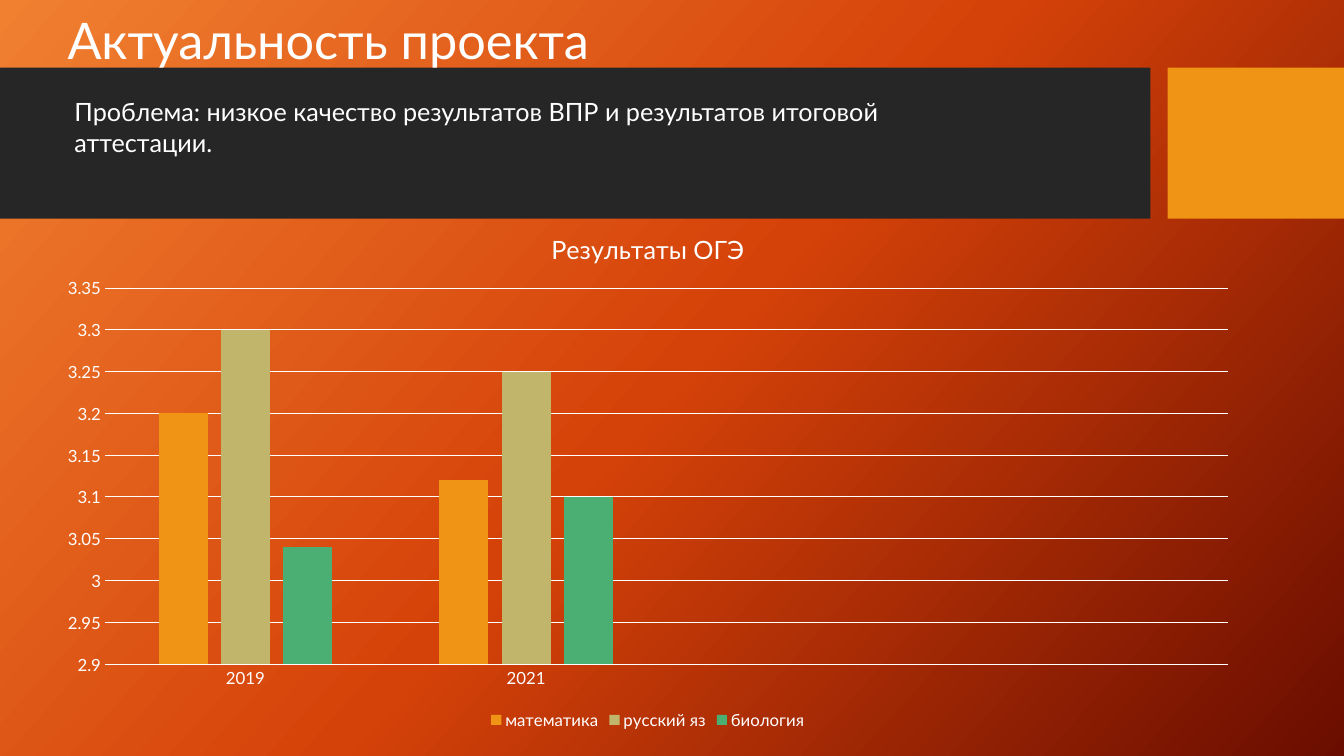
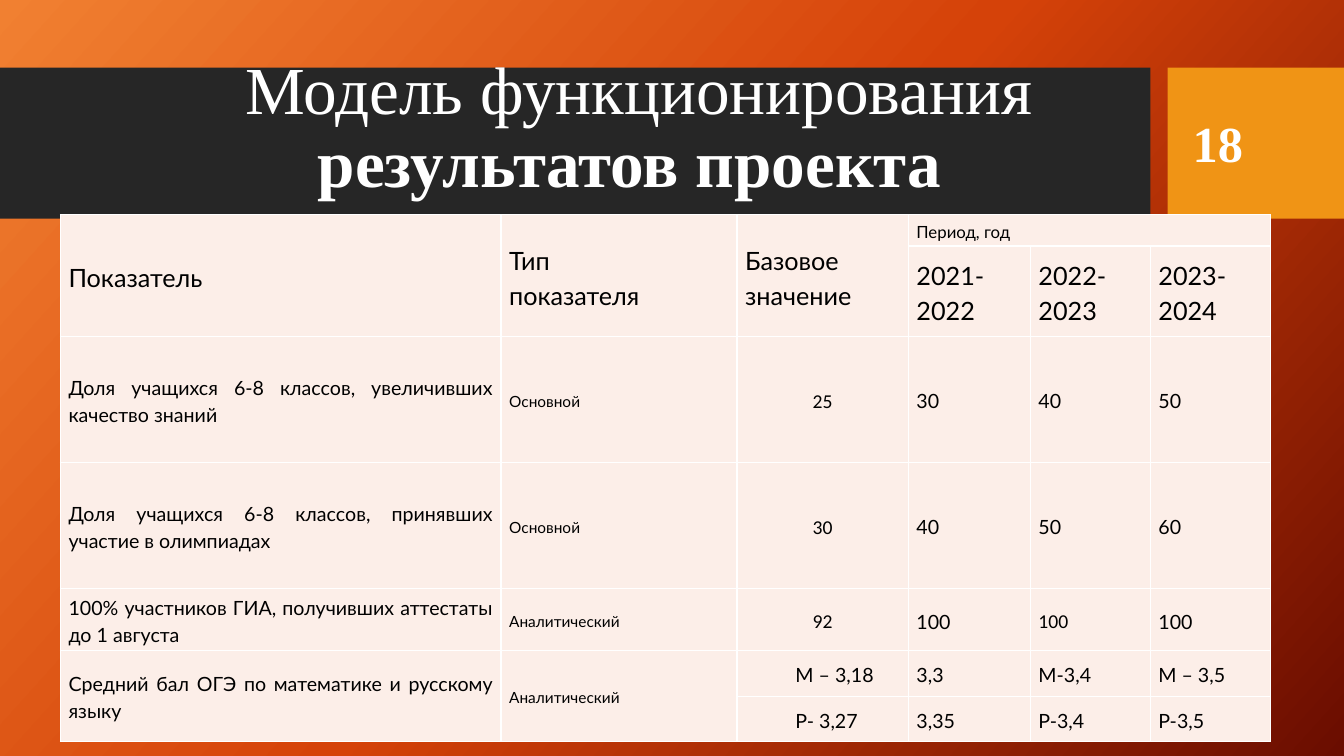
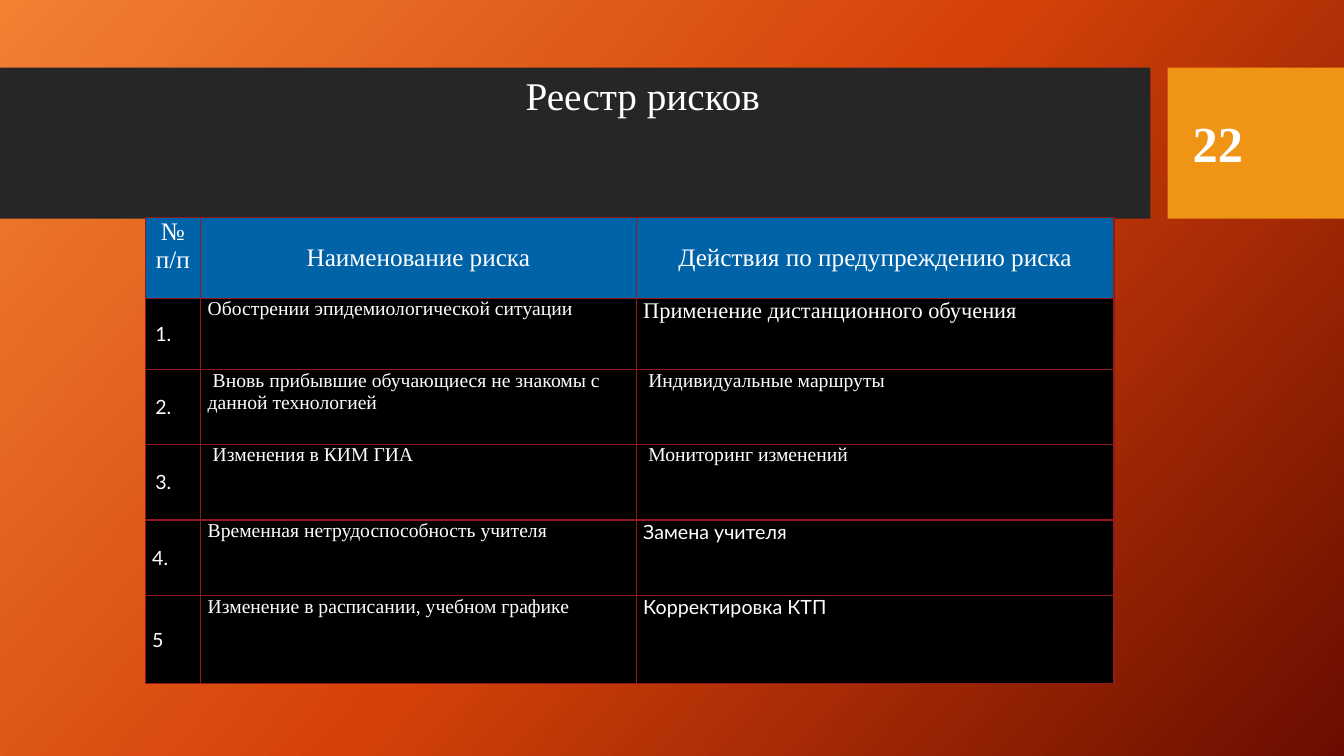
"""Builds three project slides: exam results chart, indicator table and risk register."""
from copy import deepcopy
from dataclasses import dataclass

from lxml import etree
from pptx import Presentation
from pptx.chart.data import CategoryChartData
from pptx.dml.color import RGBColor
from pptx.enum import chart as charts, shapes, text
from pptx.oxml import ns
from pptx.util import Inches, Pt


@dataclass(frozen=True)
class Theme:
    sans: str = "Lato"
    serif: str = "Times New Roman"
    plain: str = "Calibri"
    white: str = "FFFFFF"
    black: str = "000000"
    band: str = "262626"
    accent: str = "F09415"
    header: str = "0062A7"
    cell: str = "FCEEE8"
    risk_border: str = "921A1D"
    gradient: tuple = ((0, "F18031"), (0.5, "D54209"), (1, "6A0D00"))
    series: tuple = ("F09415", "C1B56B", "4BAF73")
    title: int = 36
    title_large: int = 48
    title_small: int = 28
    heading: int = 18
    action: int = 16
    body: int = 14
    label: int = 12
    small: int = 11


THEME = Theme()
LEFT, CENTER, JUSTIFY = text.PP_ALIGN.LEFT, text.PP_ALIGN.CENTER, text.PP_ALIGN.JUSTIFY
TOP, MIDDLE, BOTTOM = text.MSO_ANCHOR.TOP, text.MSO_ANCHOR.MIDDLE, text.MSO_ANCHOR.BOTTOM

BANDS = [((0, 0.67, 11.41, 1.5), THEME.band), ((11.58, 0.67, 1.75, 1.5), THEME.accent)]
NUMBER_BOX = (11.73, 0.82, 1.26, 1.19)

PROBLEM = "Проблема: низкое качество результатов ВПР и результатов итоговой аттестации."
YEARS = ["2019", "2021", "", ""]
RESULTS = {
    "математика": (3.2, 3.12, None, None),
    "русский яз": (3.3, 3.25, None, None),
    "биология": (3.04, 3.1, None, None),
}
PLOT_LAYOUT = {"x": 0.051, "y": 0.148, "w": 0.929, "h": 0.719}

HEAD = dict(size=THEME.heading)
KIND = dict(size=THEME.small)
BASE = dict(font=THEME.plain, align=CENTER)
SCORE = dict(margin=0.5)
INDICATORS = [
    [("Показатель", HEAD), ("Тип\nпоказателя", HEAD), ("Базовое\nзначение", HEAD),
     ("Период, год", dict(size=THEME.label)), None, None],
    [None, None, None, ("2021-2022", HEAD), ("2022-2023", HEAD), ("2023-2024", HEAD)],
    [("Доля учащихся 6-8 классов, увеличивших качество знаний", {}), ("Основной", KIND),
     ("25", BASE), ("30", {}), ("40", {}), ("50", {})],
    [("Доля учащихся 6-8 классов, принявших участие в олимпиадах", {}), ("Основной", KIND),
     ("30", BASE), ("40", {}), ("50", {}), ("60", {})],
    [("100% участников ГИА, получивших аттестаты до 1 августа", {}), ("Аналитический", KIND),
     ("92", BASE), ("100", {}), ("100", dict(font=THEME.plain)), ("100", {})],
    [("Средний бал ОГЭ по математике и русскому языку", {}), ("Аналитический", KIND),
     ("М – 3,18", SCORE), ("3,3", {}), ("М-3,4", {}), ("М – 3,5", {})],
    [None, None, ("Р- 3,27", SCORE), ("3,35", {}), ("Р-3,4", {}), ("Р-3,5", {})],
]
INDICATOR_SPANS = [(0, 0, 1, 0), (0, 1, 1, 1), (0, 2, 1, 2), (0, 3, 0, 5), (5, 0, 6, 0), (5, 1, 6, 1)]

RISK_HEAD = dict(size=THEME.heading, align=CENTER, anchor=MIDDLE, fill=THEME.header)
WIDE = dict(font=THEME.sans, anchor=MIDDLE, insets=(0.1, 0.05))
NARROW = dict(font=THEME.sans, anchor=MIDDLE)
SHIFTED = dict(first=0.05)
SANS = dict(font=THEME.sans)
RISKS = [
    [("№\nп/п", dict(RISK_HEAD, anchor=TOP)), ("Наименование риска", RISK_HEAD),
     ("Действия по предупреждению риска", RISK_HEAD)],
    [("1.", WIDE), ("Обострении эпидемиологической ситуации", {}),
     ("Применение дистанционного обучения", dict(size=THEME.action))],
    [("2.", WIDE), ("Вновь прибывшие обучающиеся не знакомы с данной технологией", SHIFTED),
     ("Индивидуальные маршруты", SHIFTED)],
    [("3.", WIDE), ("Изменения в КИМ ГИА", SHIFTED), ("Мониторинг изменений", SHIFTED)],
    [("4.", NARROW), ("Временная нетрудоспособность учителя", {}), ("Замена учителя", SANS)],
    [("5", NARROW), ("Изменение в расписании, учебном графике", {}), ("Корректировка КТП", SANS)],
]


def rgb(value):
    return RGBColor.from_string(value)


def place(box, area):
    box.left, box.top, box.width, box.height = map(Inches, area)


def style_font(font, size, name=THEME.sans, color=THEME.white, bold=False):
    font.size, font.name, font.bold = Pt(size), name, bold
    font.color.rgb = rgb(color)


def write(para, words, size, font=THEME.sans, color=THEME.white, bold=False,
          align=LEFT, spacing=1.0, margin=0, first=0):
    para.alignment, para.line_spacing = align, spacing
    properties = para._p.get_or_add_pPr()
    properties.set("marL", str(Inches(margin)))
    properties.set("indent", str(Inches(first)))
    span = para.add_run()
    span.text = words
    style_font(span.font, size, font, color, bold)


def write_lines(frame, lines, anchor=TOP, **style):
    frame.word_wrap, frame.vertical_anchor = True, anchor
    for index, (words, changes) in enumerate(lines):
        para = frame.add_paragraph() if index else frame.paragraphs[0]
        write(para, words, **{**style, **changes})


def set_title(page, area, lines, **style):
    title = page.shapes.title
    place(title, area)
    title.text_frame.auto_size = text.MSO_AUTO_SIZE.NONE
    write_lines(title.text_frame, lines, spacing=0.9, **style)


def add_text(page, area, words, **style):
    box = page.shapes.add_textbox(*map(Inches, area))
    write_lines(box.text_frame, [(words, {})], **style)


def add_number(page, number):
    add_text(page, NUMBER_BOX, number, size=THEME.title, font=THEME.serif, bold=True, anchor=MIDDLE)


def set_borders(cell, color):
    properties = cell._tc.get_or_add_tcPr()
    for side in ("lnL", "lnR", "lnT", "lnB"):
        line = etree.SubElement(properties, ns.qn(f"a:{side}"), w=str(Pt(1)))
        solid = etree.SubElement(line, ns.qn("a:solidFill"))
        etree.SubElement(solid, ns.qn("a:srgbClr"), val=color)


def add_grid(page, corner, widths, heights, rows, border, defaults, spans=()):
    area = (*corner, sum(widths), sum(heights))
    table = page.shapes.add_table(len(rows), len(widths), *map(Inches, area)).table
    table.first_row = table.horz_banding = False
    for column, width in zip(table.columns, widths):
        column.width = Inches(width)
    for row, height in zip(table.rows, heights):
        row.height = Inches(height)
    for top, left, bottom, right in spans:
        table.cell(top, left).merge(table.cell(bottom, right))
    for row_index, row in enumerate(rows):
        for column_index, entry in enumerate(row):
            cell = table.cell(row_index, column_index)
            words, changes = entry or ("", {})
            style = {**defaults, **changes}
            side, edge = map(Inches, style.pop("insets"))
            cell.margin_left = cell.margin_right = side
            cell.margin_top = cell.margin_bottom = edge
            cell.vertical_anchor = style.pop("anchor")
            set_borders(cell, border)
            cell.fill.solid()
            cell.fill.fore_color.rgb = rgb(style.pop("fill"))
            if entry:
                for index, line in enumerate(words.split("\n")):
                    para = cell.text_frame.add_paragraph() if index else cell.text_frame.paragraphs[0]
                    write(para, line, **style)


def set_plot_layout(chart):
    plot_area = chart._chartSpace.chart.plotArea
    for old in plot_area.findall(ns.qn("c:layout")):
        plot_area.remove(old)
    layout = etree.Element(ns.qn("c:layout"))
    manual = etree.SubElement(layout, ns.qn("c:manualLayout"))
    settings = {"layoutTarget": "inner", "xMode": "edge", "yMode": "edge", **PLOT_LAYOUT}
    for name, value in settings.items():
        etree.SubElement(manual, ns.qn(f"c:{name}"), val=str(value))
    plot_area.insert(0, layout)


def add_results_chart(page, area):
    data = CategoryChartData()
    data.categories = YEARS
    for name, values in RESULTS.items():
        data.add_series(name, values)
    kind = charts.XL_CHART_TYPE.COLUMN_CLUSTERED
    chart = page.shapes.add_chart(kind, *map(Inches, area), data).chart
    style_font(chart.font, THEME.label)
    chart.has_title = True
    write(chart.chart_title.text_frame.paragraphs[0], "Результаты ОГЭ", THEME.heading, align=CENTER)
    chart.chart_title.include_in_layout = False
    chart.has_legend = True
    chart.legend.position = charts.XL_LEGEND_POSITION.BOTTOM
    chart.legend.include_in_layout = False
    style_font(chart.legend.font, THEME.label)
    plot = chart.plots[0]
    plot.gap_width, plot.overlap, plot.vary_by_categories = 219, -27, False
    for series, color in zip(plot.series, THEME.series):
        series.format.fill.solid()
        series.format.fill.fore_color.rgb = rgb(color)
        series.invert_if_negative = False
    for axis in (chart.category_axis, chart.value_axis):
        axis.major_tick_mark = axis.minor_tick_mark = charts.XL_TICK_MARK.NONE
        style_font(axis.tick_labels.font, THEME.label)
    scale = chart.value_axis
    scale.minimum_scale, scale.maximum_scale, scale.major_unit = 2.9, 3.35, 0.05
    scale.tick_labels.number_format = "General"
    scale.tick_labels.number_format_is_linked = False
    scale.format.line.fill.background()
    for line in (chart.category_axis.format.line, scale.major_gridlines.format.line):
        line.color.rgb = rgb(THEME.white)
        line.width = Pt(0.75)
    set_plot_layout(chart)


def set_background(master):
    fill = master.background.fill
    fill.gradient()
    fill.gradient_angle = 318
    stops = master.element.find(f".//{ns.qn('p:bg')}//{ns.qn('a:gsLst')}")
    stops.append(deepcopy(stops[0]))
    for stop, (position, color) in zip(fill.gradient_stops, THEME.gradient):
        stop.position = position
        stop.color.rgb = rgb(color)


def add_bands(page, layout):
    for index, (area, color) in enumerate(BANDS):
        band = page.shapes.add_shape(shapes.MSO_SHAPE.RECTANGLE, *map(Inches, area))
        band.shadow.inherit = False
        band.fill.solid()
        band.fill.fore_color.rgb = rgb(color)
        band.line.fill.background()
        layout.shapes._spTree.insert(2 + index, band._element)


def build_results(page):
    set_title(page, (0.57, 0.11, 10.51, 1.18), [("Актуальность проекта", {})], size=THEME.title)
    add_text(page, (0.64, 0.91, 8.49, 0.71), PROBLEM, size=THEME.heading)
    add_results_chart(page, (0.43, 2.09, 11.99, 5.19))


def build_indicators(page):
    lines = [("Модель функционирования", dict(margin=0.19)), ("результатов проекта", dict(bold=True))]
    set_title(page, (1.25, 0.51, 9.99, 1.54), lines, size=THEME.title_large,
              font=THEME.serif, align=CENTER, anchor=BOTTOM)
    add_number(page, "18")
    defaults = dict(size=THEME.body, color=THEME.black, align=JUSTIFY, spacing=1.15,
                    anchor=MIDDLE, insets=(0.08, 0.04), fill=THEME.cell)
    add_grid(page, (0.6, 2.13), (4.37, 2.34, 1.7, 1.21, 1.19, 1.19),
             (0.29, 0.9, 1.25, 1.25, 0.6, 0.45, 0.45), INDICATORS, THEME.white,
             defaults, INDICATOR_SPANS)


def build_risks(page):
    set_title(page, (2.18, 0.52, 8.39, 0.9), [("Реестр рисков", {})], size=THEME.title_small,
              font=THEME.serif, align=CENTER, anchor=MIDDLE)
    add_number(page, "22")
    defaults = dict(size=THEME.body, font=THEME.serif, anchor=TOP, insets=(0.07, 0), fill=THEME.black)
    add_grid(page, (1.44, 2.16), (0.55, 4.32, 4.74), (0.8, 0.71, 0.74, 0.75, 0.75, 0.87),
             RISKS, THEME.risk_border, defaults)


def main():
    deck = Presentation()
    deck.slide_width, deck.slide_height = Inches(13.33), Inches(7.5)
    layout = deck.slide_layouts.get_by_name("Title Only")
    set_background(deck.slide_master)
    pages = [deck.slides.add_slide(layout) for _ in range(3)]
    add_bands(pages[0], layout)
    for build, page in zip((build_results, build_indicators, build_risks), pages):
        build(page)
    deck.save("out.pptx")


if __name__ == "__main__":
    main()
